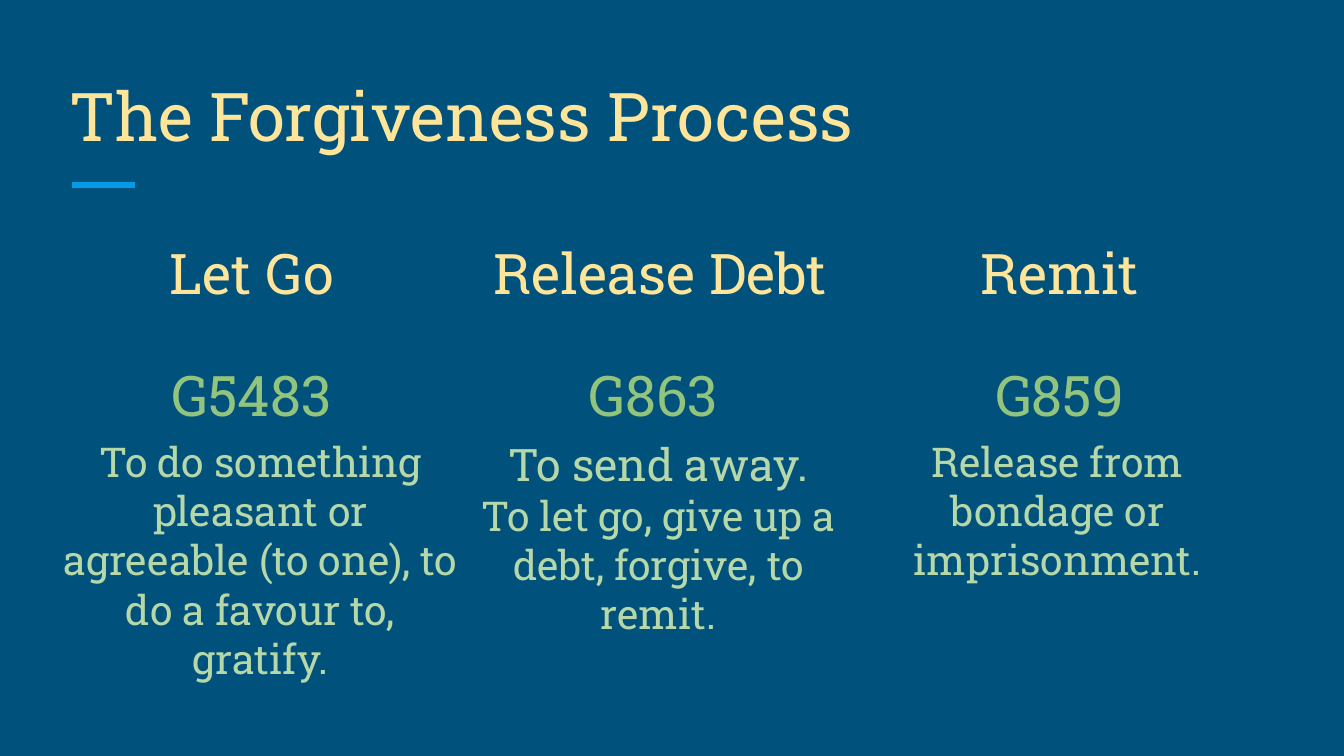
import pptx
import pptx.util
import pptx.dml.color
import pptx.enum.shapes
import pptx.enum.text
import pptx.oxml.ns
import lxml.etree

FONT = "Roboto Slab"
BACK, BLUE, CREAM, GREEN, PALE = "00517C", "039BE5", "FFE599", "93C47D", "B6D7A8"

TITLE = "The Forgiveness Process"
# Tag left and width, note left and width, word, code, note lines with sizes
COLS = [
    (82, 371, 50, 421, "Let Go", "G5483",
     [("To do something pleasant or agreeable (to one), to do a favour to, gratify.", 22)]),
    (465, 409, 448, 421, " Release Debt", "G863",
     [("To send away.", 24), ("To let go, give up a debt, forgive, to remit.", 22)]),
    (890, 371, 840, 435, "Remit", "G859",
     [("Release from bondage or imprisonment.", 22)]),
]
WORD_Y, CODE_Y, TAG_H = 210, 332, 125
NOTE_Y, NOTE_H = 423, 276

ANCHOR = pptx.enum.text.MSO_ANCHOR
ALIGN = pptx.enum.text.PP_ALIGN
SHAPE = pptx.enum.shapes.MSO_SHAPE


def px(n):
    return pptx.util.Emu(round(n * 914400 / 134.4))


def rgb(code):
    return pptx.dml.color.RGBColor.from_string(code)


def write(shape, lines, color, anchor, align):
    frame = shape.text_frame
    frame.text = "\n".join(text for text, size in lines)
    frame.word_wrap = True
    frame.auto_size = pptx.enum.text.MSO_AUTO_SIZE.NONE
    frame.vertical_anchor = anchor
    frame.margin_left = frame.margin_right = pptx.util.Inches(0.1)
    frame.margin_top = frame.margin_bottom = pptx.util.Inches(0.1)
    for para, (text, size) in zip(frame.paragraphs, lines):
        para.alignment = align
        for run in para.runs:
            run.font.name = FONT
            run.font.size = pptx.util.Pt(size)
            run.font.color.rgb = rgb(color)


def tag(slide, x, y, w, text, color):
    shape = slide.shapes.add_shape(SHAPE.PENTAGON, px(x), px(y), px(w), px(TAG_H))
    shape.adjustments[0] = 0.51
    shape.shadow.inherit = False
    shape.fill.background()
    shape.line.fill.background()
    write(shape, [(text, 30)], color, ANCHOR.MIDDLE, ALIGN.CENTER)


deck = pptx.Presentation()
deck.slide_width, deck.slide_height = px(1344), px(756)
slide = deck.slides.add_slide(deck.slide_layouts[5])
slide.background.fill.solid()
slide.background.fill.fore_color.rgb = rgb(BACK)

# Title and the short rule under it
title = slide.shapes.title
title.left, title.top, title.width, title.height = px(56), px(67), px(1230), px(101)
write(title, [(TITLE, 36)], CREAM, ANCHOR.BOTTOM, ALIGN.LEFT)

rule = slide.shapes.add_connector(
    pptx.enum.shapes.MSO_CONNECTOR.STRAIGHT, px(72), px(185), px(135), px(185))
rule.line.color.rgb = rgb(BLUE)
rule.line.width = pptx.util.Pt(3)
lxml.etree.SubElement(rule._element.spPr, pptx.oxml.ns.qn("a:effectLst"))

# Columns: word, code and note
for x, w, left, wide, word, code, lines in COLS:
    note = slide.shapes.add_textbox(px(left), px(NOTE_Y), px(wide), px(NOTE_H))
    write(note, lines, PALE, ANCHOR.TOP, ALIGN.CENTER)
    tag(slide, x, CODE_Y, w, code, GREEN)
    tag(slide, x, WORD_Y, w, word, CREAM)

deck.save("out.pptx")
